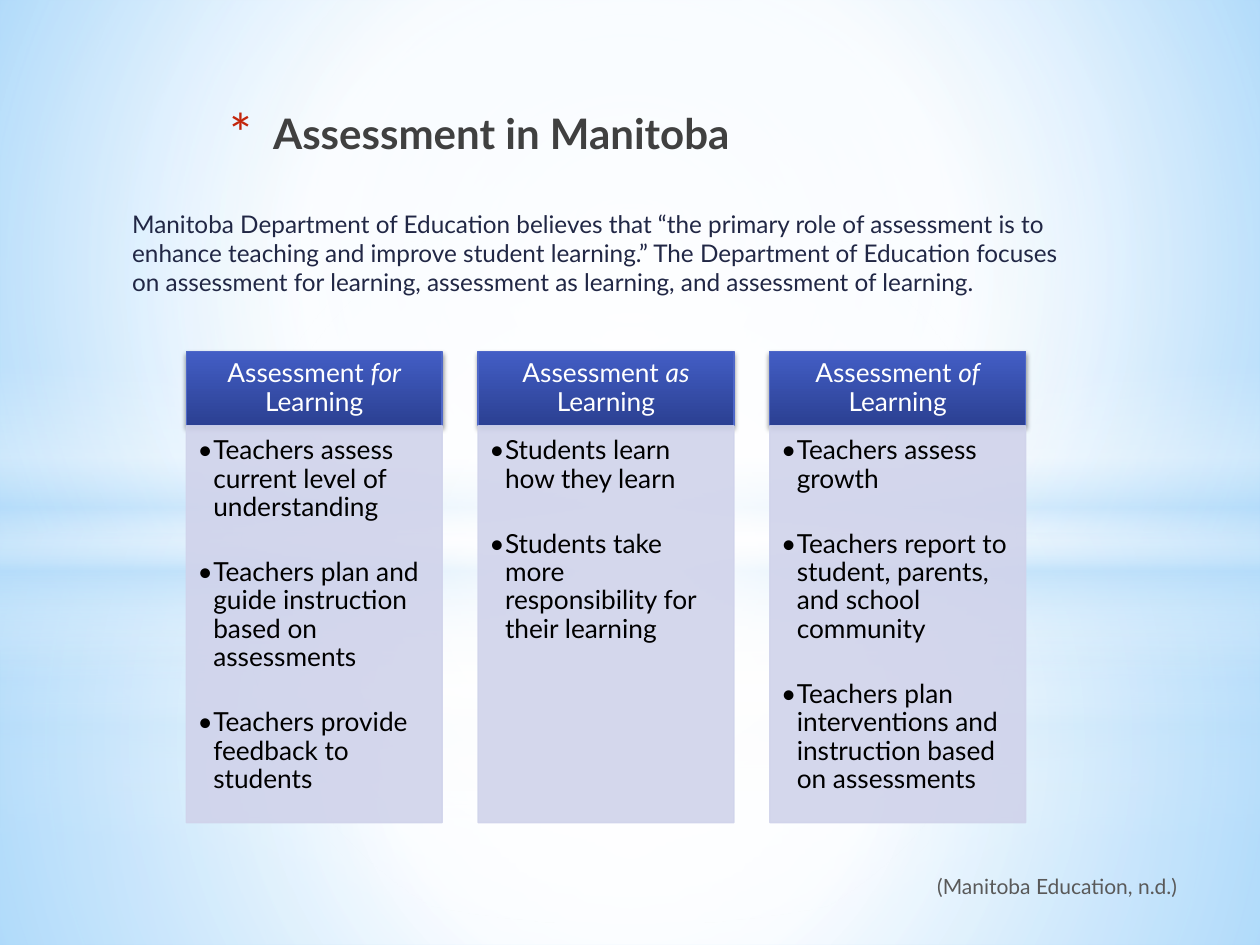
from dataclasses import dataclass

from lxml.etree import SubElement
from pptx import Presentation
from pptx.dml.color import RGBColor as Color
from pptx.enum.shapes import MSO_SHAPE as Shape
from pptx.enum.text import MSO_ANCHOR as Anchor, MSO_AUTO_SIZE as AutoSize, PP_ALIGN as Align
from pptx.oxml import parse_xml
from pptx.oxml.ns import nsdecls, qn
from pptx.util import Pt


@dataclass(frozen=True)
class Theme:
    font: str = "Lato"
    white: str = "FFFFFF"
    black: str = "000000"
    sky: str = "B4DCFA"
    backdrop_center: str = "9ED5FF"
    backdrop_edge: str = "5BB9FF"
    title: str = "404040"
    accent: str = "C3260C"
    body: str = "212745"
    citation: str = "595959"
    header_top: str = "435EC5"
    header_bottom: str = "2B4092"
    header_line: str = "4E67C8"
    panel: str = "D0D3EB"
    title_size: float = 24
    body_size: float = 13.9
    column_size: float = 15
    citation_size: float = 12


class SlideBuilder:
    """Draws styled elements on the current slide, with lengths in points."""

    def __init__(self, slide, theme):
        self.slide = slide
        self.theme = theme

    def gradient(self, holder, stops, focus=None):
        fill = parse_xml(f'<a:gradFill {nsdecls("a")} rotWithShape="1"/>')
        stop_list = SubElement(fill, qn("a:gsLst"))
        for position, color, opacity in stops:
            stop = SubElement(stop_list, qn("a:gs"), pos=str(position * 1000))
            rgb = SubElement(stop, qn("a:srgbClr"), val=color)
            if opacity < 100:
                SubElement(rgb, qn("a:alpha"), val=str(opacity * 1000))
        if focus:
            shade = SubElement(fill, qn("a:path"), path="circle")
            sides = {side: str(value * 1000) for side, value in zip("ltrb", focus)}
            SubElement(shade, qn("a:fillToRect"), **sides)
        else:
            SubElement(fill, qn("a:lin"), ang="5400000", scaled="0")
        holder.replace(holder.find(qn("a:solidFill")), fill)

    def background(self, stops, focus):
        self.slide.background.fill.solid()
        holder = self.slide.element.find(".//" + qn("p:bgPr"))
        self.gradient(holder, stops, focus)

    def block(self, kind, left, top, width, height, color, line=None):
        shape = self.slide.shapes.add_shape(kind, Pt(left), Pt(top), Pt(width), Pt(height))
        shape.shadow.inherit = False
        shape.fill.solid()
        shape.fill.fore_color.rgb = Color.from_string(color)
        if line:
            shape.line.color.rgb = Color.from_string(line)
            shape.line.width = Pt(0.75)
        else:
            shape.line.fill.background()
        return shape

    def glow(self, kind, top, height, stops, focus=(50, 50, 50, 50)):
        shape = self.block(kind, 0, top, 720, height, self.theme.white)
        self.gradient(shape.element.spPr, stops, focus)

    def scenery(self, horizon, band_top, shift, ellipse_stop):
        white, sky = self.theme.white, self.theme.sky
        for top, height, middle, opacities in (
            (horizon, 540 - horizon, 37, (91, 76, 79)),
            (0, horizon, 48, (89, 62, 79)),
        ):
            stops = [(position, color, opacity + shift) for position, color, opacity
                     in zip((0, middle, 100), (white, white, sky), opacities)]
            self.glow(Shape.RECTANGLE, top, height, stops)
        band = [(0, white, 0), (29, white, 30), (45, sky, 40),
                (55, white, 26), (65, sky, 60), (100, white, 0)]
        self.glow(Shape.RECTANGLE, band_top, 180, band, None)
        self.glow(Shape.OVAL, 126, 401.8, [(0, white, 100), (ellipse_stop, white, 0)])

    def frame(self, shape, insets, anchor=Anchor.TOP):
        frame = shape.text_frame
        frame.word_wrap = True
        frame.vertical_anchor = anchor
        frame.margin_left, frame.margin_top, frame.margin_right, frame.margin_bottom = map(Pt, insets)
        return frame

    def text_box(self, left, top, width, height):
        box = self.slide.shapes.add_textbox(Pt(left), Pt(top), Pt(width), Pt(height))
        return self.frame(box, (7.2, 3.6, 7.2, 3.6))

    def run(self, paragraph, text, size, color, bold=False, italic=False):
        run = paragraph.add_run()
        run.text = text
        run.font.name = self.theme.font
        run.font.size = Pt(size)
        run.font.color.rgb = Color.from_string(color)
        run.font.bold = bold
        run.font.italic = italic

    def bullet(self, paragraph, mark, indent, color, percent=100):
        properties = paragraph._p.get_or_add_pPr()
        properties.set("marL", str(Pt(indent)))
        properties.set("indent", str(Pt(-indent)))
        tint = SubElement(properties, qn("a:buClr"))
        SubElement(tint, qn("a:srgbClr"), val=color)
        SubElement(properties, qn("a:buSzPct"), val=str(percent * 1000))
        SubElement(properties, qn("a:buFont"), typeface=self.theme.font)
        SubElement(properties, qn("a:buChar"), char=mark)

    def title(self, text):
        paragraph = self.text_box(123.8, 57.6, 470, 113.8).paragraphs[0]
        self.bullet(paragraph, "*", 25.2, self.theme.accent, 128)
        self.run(paragraph, text, self.theme.title_size, self.theme.title, bold=True)

    def body(self, text):
        paragraph = self.text_box(68.4, 115.9, 548.6, 72).paragraphs[0]
        self.run(paragraph, text, self.theme.body_size, self.theme.body)

    def citation(self, text):
        frame = self.text_box(528.5, 495.4, 160.6, 44)
        frame.word_wrap = False
        frame.auto_size = AutoSize.NONE
        self.run(frame.paragraphs[0], text, self.theme.citation_size, self.theme.citation)

    def header(self, left, top, width, height, emphasis):
        theme = self.theme
        shape = self.block(Shape.RECTANGLE, left, top, width, height,
                           theme.header_top, theme.header_line)
        properties = shape.element.spPr
        self.gradient(properties, [(0, theme.header_top, 100), (100, theme.header_bottom, 100)])
        shadow = SubElement(properties.find(qn("a:effectLst")), qn("a:outerShdw"),
                            blurRad=str(Pt(3.1)), dist=str(Pt(1.8)), dir="5400000", rotWithShape="0")
        rgb = SubElement(shadow, qn("a:srgbClr"), val=theme.black)
        SubElement(rgb, qn("a:alpha"), val="45000")
        paragraph = self.frame(shape, (8.4, 4.8, 8.4, 4.8), Anchor.MIDDLE).paragraphs[0]
        paragraph.alignment = Align.CENTER
        paragraph.line_spacing = 0.9
        for text, italic in (("Assessment ", False), (emphasis, True), (" Learning", False)):
            self.run(paragraph, text, theme.column_size, theme.white, italic=italic)

    def panel(self, left, top, width, height, points):
        theme = self.theme
        shape = self.block(Shape.RECTANGLE, left, top, width, height, theme.panel, theme.panel)
        for rgb in shape.element.spPr.iter(qn("a:srgbClr")):
            SubElement(rgb, qn("a:alpha"), val="90000")
        frame = self.frame(shape, (6.4, 6.4, 8.5, 9.6))
        for index, text in enumerate(points):
            paragraph = frame.add_paragraph() if index else frame.paragraphs[0]
            paragraph.alignment = Align.LEFT
            paragraph.line_spacing = 0.9
            paragraph.space_after = Pt(21)
            self.bullet(paragraph, "•", 9, theme.black)
            self.run(paragraph, text, theme.column_size, theme.black)


COLUMNS = {
    "for": ["Teachers assess current level of understanding",
            "Teachers plan and guide instruction based on assessments",
            "Teachers provide feedback to students"],
    "as": ["Students learn how they learn",
           "Students take more responsibility for their learning"],
    "of": ["Teachers assess growth",
           "Teachers report to student, parents, and school community",
           "Teachers plan interventions and instruction based on assessments"],
}


def main():
    presentation = Presentation()
    presentation.slide_width, presentation.slide_height = Pt(720), Pt(540)
    theme = Theme()
    builder = SlideBuilder(presentation.slides.add_slide(presentation.slide_layouts[6]), theme)
    builder.background([(0, theme.backdrop_center, 100), (60, theme.white, 100),
                        (100, theme.backdrop_edge, 100)], (20, 10, 20, 60))
    builder.scenery(401.8, 296.6, 0, 56)
    builder.scenery(304.6, 208.8, 1, 54)
    builder.title("Assessment in Manitoba")
    builder.body("Manitoba Department of Education believes that “the primary role of assessment is to "
                 "enhance teaching and improve student learning.” The Department of Education focuses on "
                 "assessment for learning, assessment as learning, and assessment of learning.")
    for index, (emphasis, points) in enumerate(COLUMNS.items()):
        left = 106.5 + index * 166.7
        builder.header(left, 200.8, 146.2, 42.5, emphasis)
        builder.panel(left, 243.3, 146.2, 226.8, points)
    builder.citation("(Manitoba Education, n.d.)")
    presentation.save("out.pptx")


if __name__ == "__main__":
    main()
